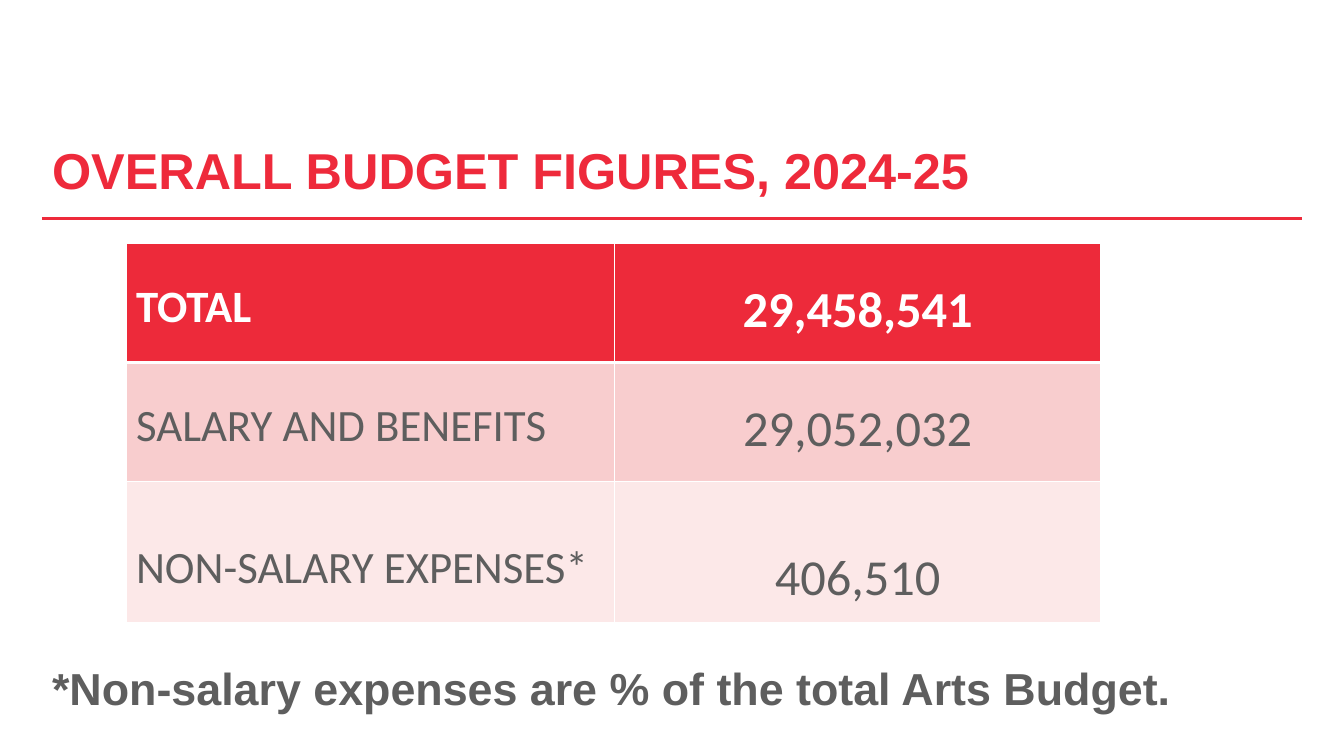
from lxml.etree import SubElement as Sub
from pptx import Presentation
from pptx.dml.color import RGBColor as RGB
from pptx.enum.shapes import MSO_CONNECTOR as Conn
from pptx.enum.text import MSO_ANCHOR as Anchor, MSO_AUTO_SIZE as Auto, PP_ALIGN as Align
from pptx.oxml.ns import qn
from pptx.util import Inches, Pt

UNIT = Inches(7.5) / 18
HUE = {"red": "EE2A3B", "head": "ED2A3A", "mid": "F8CDCE", "pale": "FCE8E8",
       "text": "5E5E5E", "white": "FFFFFF"}
ROWS = [
    ("TOTAL", "29,458,541", "head", 2.83, (0.36, 0.36)),
    ("SALARY AND BENEFITS", "29,052,032", "mid", 2.83, (0.36, 0.36)),
    ("NON-SALARY EXPENSES*", "406,510", "pale", 3.36, (0.59, 0.66)),
]
COLS = (11.64, 11.57)


def grid(n):
    """Turn grid steps into a length."""
    return round(n * UNIT)


def style(para, face, size, hue, bold):
    """Set the font of a paragraph."""
    font = para.font
    font.name, font.size, font.bold = face, Pt(size), bold
    font.color.rgb = RGB.from_string(HUE[hue])


def put_text(shape, box, text, size, hue):
    """Place a placeholder in the box and fill it with one bold line."""
    shape.left, shape.top, shape.width, shape.height = map(grid, box)
    frame = shape.text_frame
    frame.text = text
    frame.word_wrap, frame.auto_size = True, Auto.NONE
    frame.vertical_anchor = Anchor.TOP
    para = frame.paragraphs[0]
    para.alignment, para.space_before = Align.LEFT, Pt(0)
    props = para._p.get_or_add_pPr()
    props.set("marL", "0")
    props.set("indent", "0")
    Sub(props, qn("a:buNone"))
    style(para, "Arial", size, hue, True)


def add_rule(slide, left, top, width):
    """Draw the red rule below the title."""
    y = grid(top)
    rule = slide.shapes.add_connector(Conn.STRAIGHT, grid(left), y, grid(left + width), y)
    rule.line.color.rgb = RGB.from_string(HUE["red"])
    rule.line.width = Pt(2)
    Sub(rule._element.spPr, qn("a:effectLst"))


def edge(cell, side, width):
    """Give one side of a cell a white border."""
    line = Sub(cell._tc.get_or_add_tcPr(), qn(f"a:ln{side}"), w=str(Pt(width)))
    Sub(Sub(line, qn("a:solidFill")), qn("a:srgbClr"), val=HUE["white"])


def add_budget(slide, left, top):
    """Build the budget table from its top left corner."""
    high = sum(row[3] for row in ROWS)
    table = slide.shapes.add_table(len(ROWS), len(COLS), grid(left), grid(top),
                                   grid(sum(COLS)), grid(high)).table
    for col, width in zip(table.columns, COLS):
        col.width = grid(width)
    for r, (label, value, fill, height, pads) in enumerate(ROWS):
        table.rows[r].height = grid(height)
        for c, text in enumerate((label, value)):
            cell = table.cell(r, c)
            for side in "LRTB":
                thick = (r, side) in ((0, "B"), (1, "T"))
                edge(cell, side, 3 if thick else 1)
            cell.fill.solid()
            cell.fill.fore_color.rgb = RGB.from_string(HUE[fill])
            cell.margin_top = Inches(pads[c])
            cell.text = text
            para = cell.text_frame.paragraphs[0]
            para.alignment = Align.CENTER if c else Align.LEFT
            style(para, "Calibri", 36 if c else 32, "text" if r else "white", r == 0)


def main():
    """Build and save the slide."""
    deck = Presentation()
    deck.slide_width, deck.slide_height = grid(32), grid(18)
    slide = deck.slides.add_slide(deck.slide_layouts[1])
    title, note = slide.placeholders
    add_rule(slide, 1, 5.2, 30)
    put_text(title, (1, 3.2, 30, 1.4), "OVERALL BUDGET FIGURES, 2024-25", 36, "red")
    put_text(note, (1, 15.6, 30, 1.5),
             "*Non-salary expenses are % of the total Arts Budget.", 32, "text")
    add_budget(slide, 3, 5.8)
    deck.save("out.pptx")


if __name__ == "__main__":
    main()
